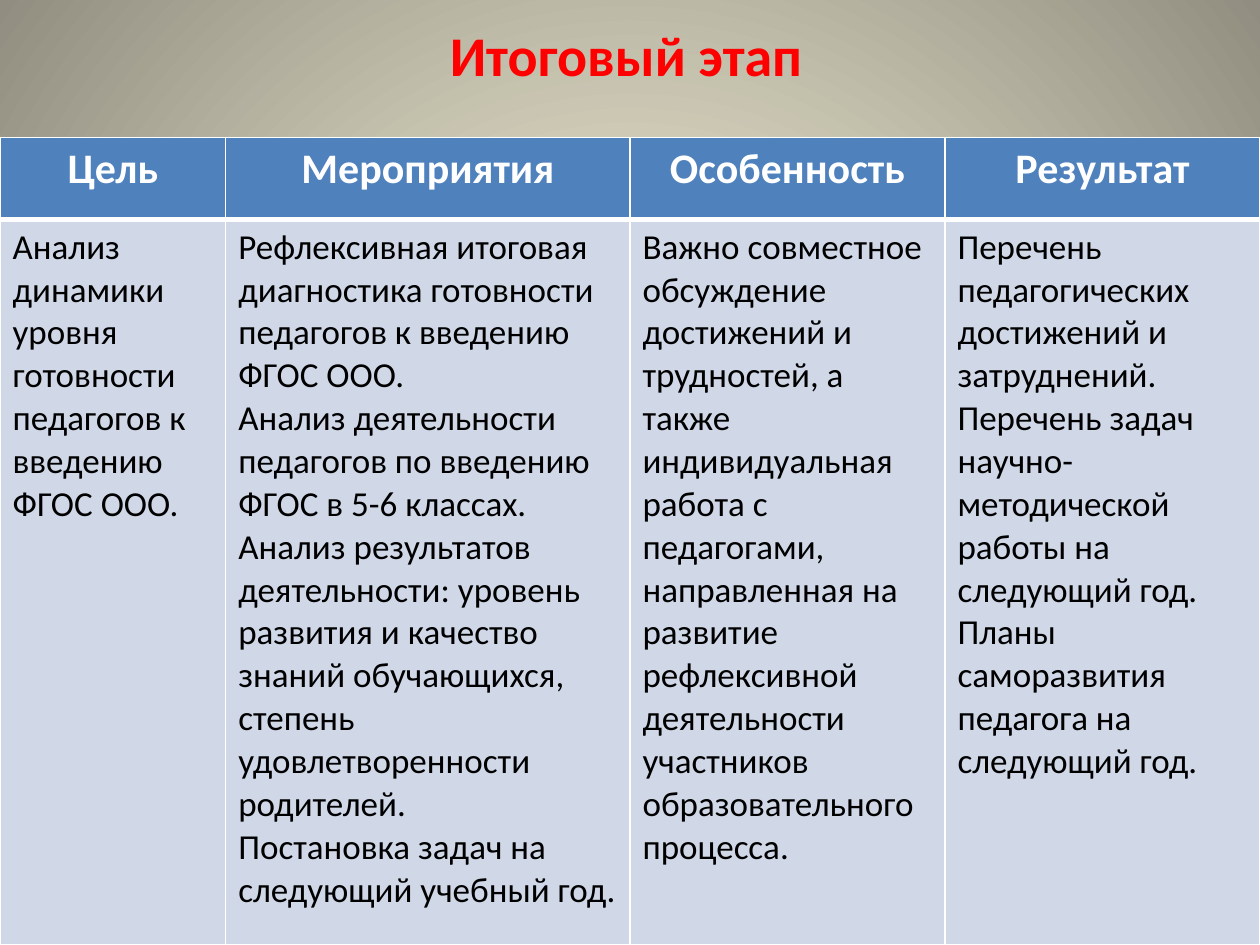
from dataclasses import dataclass

from lxml.etree import SubElement
from pptx import Presentation
from pptx.dml.color import RGBColor
from pptx.enum.text import MSO_ANCHOR, PP_ALIGN
from pptx.oxml import parse_xml
from pptx.oxml.ns import nsdecls, qn
from pptx.slide import Slide
from pptx.table import _Cell as Cell
from pptx.util import Pt

FONT = "Calibri"
RED = RGBColor(0xFF, 0x00, 0x00)
WHITE = RGBColor(0xFF, 0xFF, 0xFF)
BLACK = RGBColor(0x00, 0x00, 0x00)
BLUE = RGBColor(0x4F, 0x81, 0xBD)
PALE_BLUE = RGBColor(0xD0, 0xD8, 0xE8)
CREAM = RGBColor(0xFC, 0xF7, 0xDD)
TAUPE = RGBColor(0x91, 0x8E, 0x81)

HEADER_HEIGHT, BODY_HEIGHT = 46.8, 414.72
THIN, THICK = 1, 3


@dataclass(frozen=True)
class Column:
    heading: str
    width: float
    paragraphs: tuple[str, ...]


@dataclass(frozen=True)
class CellStyle:
    size: float
    bold: bool
    color: RGBColor
    fill: RGBColor
    align: PP_ALIGN
    top: float
    bottom: float


HEADER = CellStyle(24, True, WHITE, BLUE, PP_ALIGN.CENTER, THIN, THICK)
BODY = CellStyle(20, False, BLACK, PALE_BLUE, PP_ALIGN.LEFT, THICK, THIN)

COLUMNS = (
    Column("Цель", 129, (
        "Анализ динамики уровня готовности педагогов к введению ФГОС ООО.",
    )),
    Column("Мероприятия", 231, (
        "Рефлексивная итоговая диагностика готовности педагогов к введению ФГОС ООО.",
        "Анализ деятельности педагогов по введению ФГОС в 5-6 классах.",
        "Анализ результатов деятельности: уровень развития и качество знаний "
        "обучающихся, степень удовлетворенности родителей.",
        "Постановка задач на следующий учебный год.",
    )),
    Column("Особенность", 180, (
        "Важно совместное обсуждение достижений и трудностей, а также "
        "индивидуальная работа с педагогами, направленная на развитие "
        "рефлексивной деятельности участников образовательного процесса.",
    )),
    Column("Результат", 180, (
        "Перечень педагогических достижений и затруднений. Перечень задач "
        "научно-методической работы на следующий год. Планы саморазвития "
        "педагога на следующий год.",
    )),
)


def set_background(slide: Slide) -> None:
    """Fill the background with a circular gradient from the centre."""
    fill = slide.background.fill
    fill.gradient()
    for stop, color, position in zip(fill.gradient_stops, (CREAM, TAUPE), (0, 1)):
        stop.color.rgb = color
        stop.position = position
    gradient = slide.element.find(".//" + qn("a:gradFill"))
    gradient.replace(gradient.find(qn("a:lin")), parse_xml(
        f'<a:path {nsdecls("a")} path="circle">'
        '<a:fillToRect l="50000" t="50000" r="50000" b="50000"/></a:path>'))


def set_borders(cell: Cell, top: float, bottom: float) -> None:
    properties = cell._tc.get_or_add_tcPr()
    widths = {"a:lnL": THIN, "a:lnR": THIN, "a:lnT": top, "a:lnB": bottom}
    for index, (tag, width) in enumerate(widths.items()):
        line = properties.makeelement(qn(tag), {"w": str(Pt(width))})
        fill = SubElement(line, qn("a:solidFill"))
        SubElement(fill, qn("a:srgbClr"), val=str(WHITE))
        properties.insert(index, line)


def write_cell(cell: Cell, paragraphs: tuple[str, ...], style: CellStyle) -> None:
    cell.fill.solid()
    cell.fill.fore_color.rgb = style.fill
    set_borders(cell, style.top, style.bottom)
    cell.text = "\n".join(paragraphs)
    for paragraph in cell.text_frame.paragraphs:
        paragraph.alignment = style.align
        set_font(paragraph, style.size, style.bold, style.color)


def set_font(paragraph, size: float, bold: bool, color: RGBColor) -> None:
    font = paragraph.font
    font.name, font.size, font.bold = FONT, Pt(size), bold
    font.color.rgb = color


def add_title(slide: Slide, text: str) -> None:
    frame = slide.shapes.add_textbox(Pt(33.84), Pt(0), Pt(648), Pt(62)).text_frame
    frame.word_wrap = True
    frame.vertical_anchor = MSO_ANCHOR.MIDDLE
    paragraph = frame.paragraphs[0]
    paragraph.text = text
    paragraph.alignment = PP_ALIGN.CENTER
    set_font(paragraph, 32, True, RED)


def add_stage_table(slide: Slide) -> None:
    width = sum(column.width for column in COLUMNS)
    table = slide.shapes.add_table(
        2, len(COLUMNS), Pt(0), Pt(78.6), Pt(width), Pt(HEADER_HEIGHT + BODY_HEIGHT)
    ).table
    table.rows[0].height = Pt(HEADER_HEIGHT)
    table.rows[1].height = Pt(BODY_HEIGHT)
    for index, column in enumerate(COLUMNS):
        table.columns[index].width = Pt(column.width)
        write_cell(table.cell(0, index), (column.heading,), HEADER)
        write_cell(table.cell(1, index), column.paragraphs, BODY)


def main() -> None:
    presentation = Presentation()
    presentation.slide_width, presentation.slide_height = Pt(720), Pt(540)
    slide = presentation.slides.add_slide(presentation.slide_layouts[6])
    set_background(slide)
    add_title(slide, "Итоговый этап")
    add_stage_table(slide)
    presentation.save("out.pptx")


if __name__ == "__main__":
    main()
